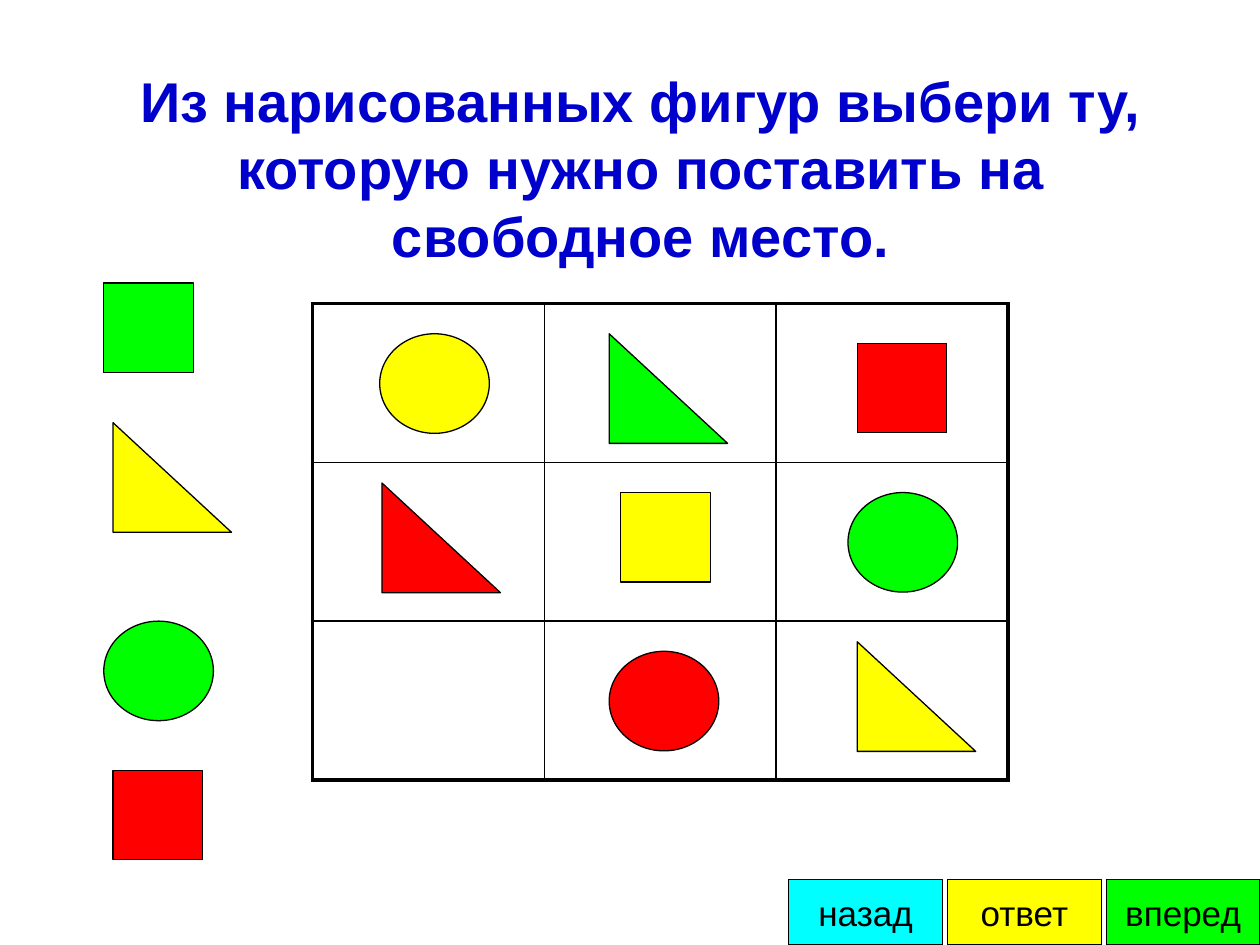
"""Build a puzzle slide: choose the figure that fits the empty cell of a 3 by 3 grid."""
import pptx
import pptx.dml.color
import pptx.enum.shapes
import pptx.enum.text
import pptx.oxml
import pptx.util
from pptx.oxml.ns import nsdecls

inch = pptx.util.Inches
BLACK, RED, GREEN, YELLOW, CYAN, BLUE = "000000", "FF0000", "00FF00", "FFFF00", "00FFFF", "0000CC"


def paint(color_format, color):
    color_format.rgb = pptx.dml.color.RGBColor.from_string(color)


def add_figure(slide, kind, color, left, top, width, height):
    figure = slide.shapes.add_shape(kind, inch(left), inch(top), inch(width), inch(height))
    figure.shadow.inherit = False
    figure.fill.solid()
    paint(figure.fill.fore_color, color)
    paint(figure.line.color, BLACK)
    figure.line.width = pptx.util.Pt(0.75)
    return figure


deck = pptx.Presentation()
deck.slide_width, deck.slide_height = inch(10), inch(7.5)
slide = deck.slides.add_slide(deck.slide_layouts[6])

question = slide.shapes.add_textbox(inch(0.83), inch(0.48), inch(8.51), inch(1.7)).text_frame
question.word_wrap = True
question.auto_size = pptx.enum.text.MSO_AUTO_SIZE.SHAPE_TO_FIT_TEXT
question.paragraphs[0].alignment = pptx.enum.text.PP_ALIGN.CENTER
sentence = question.paragraphs[0].add_run()
sentence.text = "Из нарисованных фигур выбери ту, которую нужно поставить на свободное место."
sentence.font.name, sentence.font.size, sentence.font.bold = "Arial", pptx.util.Pt(32), True
paint(sentence.font.color, BLUE)

grid_left, grid_top, column, row, count = 2.48, 2.41, 1.84, 1.26, 3
grid = slide.shapes.add_table(count, count, inch(grid_left), inch(grid_top),
                              inch(count * column), inch(count * row)).table
grid.first_row = grid.horz_banding = False
for r in range(count):
    grid.rows[r].height = inch(row)
    grid.columns[r].width = inch(column)
    for c in range(count):
        cell = grid.cell(r, c)
        outer_sides = {"L": c == 0, "R": c == count - 1, "T": r == 0, "B": r == count - 1}
        for side, outer in outer_sides.items():
            width = pptx.util.Pt(2.25 if outer else 1)
            cell._tc.get_or_add_tcPr().append(pptx.oxml.parse_xml(
                f'<a:ln{side} {nsdecls("a")} w="{width}"><a:solidFill>'
                f'<a:srgbClr val="{BLACK}"/></a:solidFill></a:ln{side}>'))
        cell.fill.background()

preset = pptx.enum.shapes.MSO_SHAPE
circle = preset.OVAL, 0.87, 0.79
square = preset.RECTANGLE, 0.71, 0.71
triangle = preset.RIGHT_TRIANGLE, 0.94, 0.87

puzzle = [
    (circle, YELLOW, 0.29, 0.19), (triangle, GREEN, 1.28, 0.19), (square, RED, 2.35, 0.25),
    (triangle, RED, 0.3, 1.13), (square, YELLOW, 1.33, 1.19), (circle, GREEN, 2.31, 1.19),
    (circle, RED, 1.28, 2.19), (triangle, YELLOW, 2.35, 2.13),
]
choices = [
    (square, GREEN, -0.9, -0.13), (triangle, YELLOW, -0.86, 0.75),
    (circle, GREEN, -0.9, 2), (square, RED, -0.86, 2.94),
]
for (kind, width, height), color, columns, rows in puzzle + choices:
    add_figure(slide, kind, color, grid_left + columns * column, grid_top + rows * row, width, height)

button_width, button_height, button_pitch = 1.22, 0.52, 1.26
for place, (label, color) in enumerate([("вперед", GREEN), ("ответ", YELLOW), ("назад", CYAN)]):
    button = add_figure(slide, preset.RECTANGLE, color, 10 - button_width - place * button_pitch,
                        7.5 - button_height, button_width, button_height).text_frame
    button.word_wrap = False
    button.vertical_anchor = pptx.enum.text.MSO_ANCHOR.MIDDLE
    button.paragraphs[0].alignment = pptx.enum.text.PP_ALIGN.CENTER
    caption = button.paragraphs[0].add_run()
    caption.text = label
    caption.font.name, caption.font.size = "Arial", pptx.util.Pt(20)
    paint(caption.font.color, BLACK)

deck.save("out.pptx")
